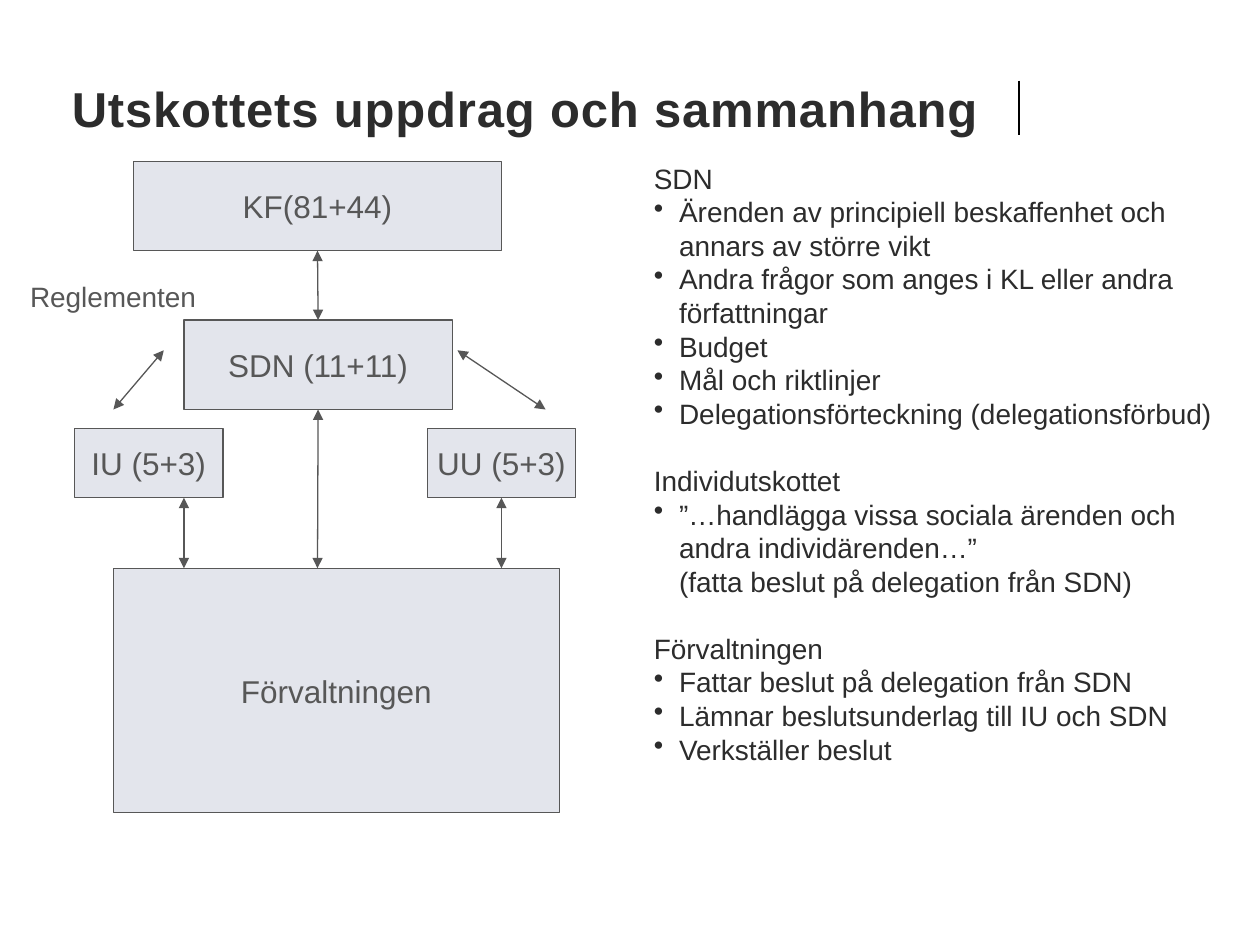
from lxml import etree
from pptx import Presentation
from pptx.dml.color import RGBColor
from pptx.enum import shapes, text
from pptx.oxml import ns
from pptx.util import Inches, Pt

INK, GREY, PALE, BLACK = "2C2C2C", "575757", "E3E5EC", "000000"
TITLE = "Utskottets uppdrag och sammanhang"
BODIES = {
    "KF": ("KF(81+44)", 1.06, 1.28, 2.92, 0.71),
    "SDN": ("SDN (11+11)", 1.46, 2.54, 2.13, 0.71),
    "IU": ("IU (5+3)", 0.59, 3.4, 1.18, 0.55),
    "UU": ("UU (5+3)", 3.39, 3.4, 1.18, 0.55),
    "Administration": ("Förvaltningen", 0.9, 4.51, 3.54, 1.94),
}
ARROWS = [
    ((2.52, 1.99), (2.52, 2.54), "KF", "SDN"),
    ((2.52, 3.25), (2.52, 4.51), "SDN", None),
    ((3.98, 3.95), (3.98, 4.51), "UU", None),
    ((1.46, 3.95), (1.46, 4.51), None, None),
    ((1.3, 2.78), (0.9, 3.25), None, None),
    ((4.33, 3.25), (3.63, 2.78), None, None),
    ((1.54, 2.73), (1.54, 2.73), None, None),
]
DUTIES = [
    ("SDN", [
        "Ärenden av principiell beskaffenhet och annars av större vikt",
        "Andra frågor som anges i KL eller andra författningar",
        "Budget",
        "Mål och riktlinjer",
        "Delegationsförteckning (delegationsförbud)",
    ], None),
    ("Individutskottet", [
        "”…handlägga vissa sociala ärenden och andra individärenden…”",
    ], "(fatta beslut på delegation från SDN)"),
    ("Förvaltningen", [
        "Fattar beslut på delegation från SDN",
        "Lämnar beslutsunderlag till IU och SDN",
        "Verkställer beslut",
    ], None),
]
BOTTOM, TOP = 2, 0
LINE_PITCH = Pt(19.2)


def color(value):
    return RGBColor.from_string(value)


def style(paragraph, size, ink, bold=False):
    for run in paragraph.runs:
        font = run.font
        font.name, font.size, font.bold = "Arial", Pt(size), bold
        font.color.rgb = color(ink)


def add_text(slide, place, inset=True):
    frame = slide.shapes.add_textbox(*map(Inches, place)).text_frame
    frame.word_wrap = True
    if not inset:
        frame.margin_left = frame.margin_right = 0
        frame.margin_top = frame.margin_bottom = 0
    return frame


def add_body(slide, label, *place):
    box = slide.shapes.add_shape(shapes.MSO_SHAPE.RECTANGLE, *map(Inches, place))
    box.shadow.inherit = False
    box.fill.solid()
    box.fill.fore_color.rgb = color(PALE)
    box.line.color.rgb = color(GREY)
    box.line.width = Pt(0.75)
    frame = box.text_frame
    frame.word_wrap = False
    frame.vertical_anchor = text.MSO_ANCHOR.MIDDLE
    frame.text = label
    frame.paragraphs[0].alignment = text.PP_ALIGN.CENTER
    style(frame.paragraphs[0], 18, GREY)
    return box


def add_line(slide, start, end, ink, width):
    line = slide.shapes.add_connector(
        shapes.MSO_CONNECTOR.STRAIGHT, *map(Inches, start + end))
    line.line.color.rgb = color(ink)
    line.line.width = Pt(width)
    etree.SubElement(line._element.spPr, ns.qn("a:effectLst"))
    return line


def add_arrow(slide, start, end, source, target):
    arrow = add_line(slide, start, end, GREY, 0.75)
    for tip in ("a:headEnd", "a:tailEnd"):
        etree.SubElement(arrow.line._get_or_add_ln(), ns.qn(tip), type="triangle")
    if source:
        arrow.begin_connect(source, BOTTOM)
    if target:
        arrow.end_connect(target, TOP)


def add_duty(frame, words, margin, indent, bullet=False, gap=False):
    first = not frame.text
    paragraph = frame.paragraphs[0] if first else frame.add_paragraph()
    paragraph.text = words
    paragraph.line_spacing = LINE_PITCH
    if gap and not first:
        paragraph.space_before = LINE_PITCH
    properties = paragraph._p.get_or_add_pPr()
    properties.set("marL", str(Inches(margin)))
    properties.set("indent", str(Inches(indent)))
    if bullet:
        etree.SubElement(properties, ns.qn("a:buChar"), char="•")
    style(paragraph, 16, INK)


def main():
    """Build the slide on the committee's remit and context."""
    deck = Presentation()
    deck.slide_width, deck.slide_height = Inches(10), Inches(7.5)
    slide = deck.slides.add_slide(deck.slide_layouts[6])

    add_line(slide, (8.09, 0.64), (8.09, 1.07), BLACK, 1)
    title = add_text(slide, (0.57, 0.52, 7.37, 0.76), inset=False)
    title.vertical_anchor = text.MSO_ANCHOR.MIDDLE
    title.text = TITLE
    heading = title.paragraphs[0]
    heading.line_spacing = Pt(27)
    style(heading, 28, INK, bold=True)
    heading.runs[0].font._element.set("spc", "50")

    duties = add_text(slide, (5.19, 1.28, 4.44, 4.8), inset=False)
    for owner, tasks, remark in DUTIES:
        add_duty(duties, owner, 0.2, -0.2, gap=True)
        for task in tasks:
            add_duty(duties, task, 0.2, -0.2, bullet=True)
        if remark:
            add_duty(duties, remark, 0.2, 0)

    boxes = {key: add_body(slide, *body) for key, body in BODIES.items()}
    for start, end, source, target in ARROWS:
        add_arrow(slide, start, end, boxes.get(source), boxes.get(target))

    rules = add_text(slide, (0.14, 2.17, 1.53, 0.37))
    rules.word_wrap = False
    rules.text = "Reglementen"
    style(rules.paragraphs[0], 16, GREY)

    deck.save("out.pptx")


if __name__ == "__main__":
    main()
